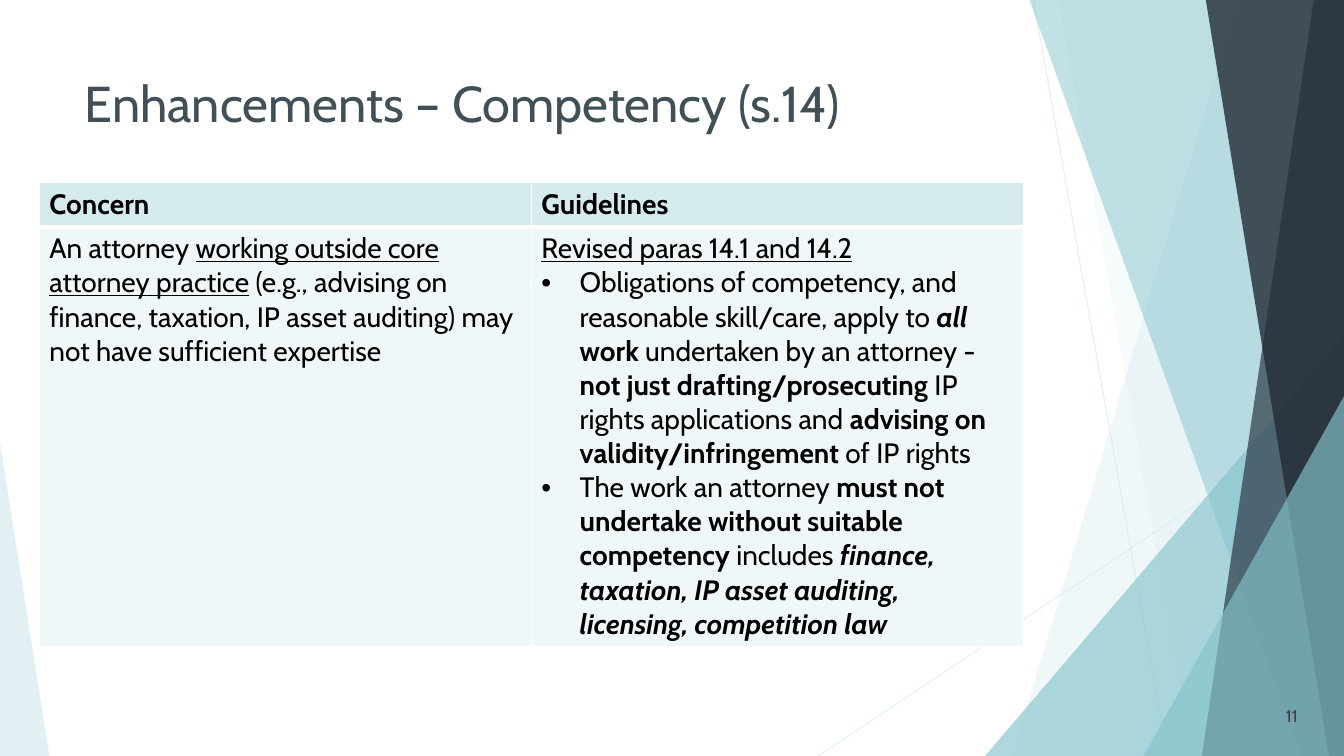
from lxml import etree
from pptx import Presentation
from pptx.dml.color import RGBColor
from pptx.enum.shapes import MSO_CONNECTOR, MSO_SHAPE
from pptx.enum.text import MSO_ANCHOR, PP_ALIGN
from pptx.oxml.ns import qn
from pptx.util import Emu, Inches, Pt

# Content: a paragraph is (bulleted, runs); a run is (text, style letters)
TITLE = "Enhancements – Competency (s.14)"
PAGE = "11"
HEADERS = ["Concern", "Guidelines"]
CONCERN = [
    (False, [("An attorney ", ""), ("working outside core attorney practice", "u"),
             (" (e.g., advising on finance, taxation, IP asset auditing) may not have "
              "sufficient expertise", "")]),
]
GUIDELINES = [
    (False, [("Revised paras 14.1 and 14.2", "u")]),
    (True, [("Obligations of competency, and reasonable skill/care, apply to ", ""),
            ("all", "bi"), (" work", "b"), (" undertaken by an attorney - ", ""),
            ("not just drafting/prosecuting", "b"), (" IP rights applications and ", ""),
            ("advising on validity/infringement", "b"), (" of IP rights", "")]),
    (True, [("The work an attorney ", ""),
            ("must not undertake without suitable competency", "b"), (" includes ", ""),
            ("finance, taxation, IP asset auditing, licensing, competition law", "bi")]),
]
ROWS = [[[(False, [(h, "b")])] for h in HEADERS], [CONCERN, GUIDELINES]]
ROW_HEIGHTS = [0.43, 4.16]
ROW_FILLS = ["D6EBEE", "F0F7F8"]
COL_WIDTH = 4.88

W, H = 13.33, 7.5
FONT = "Cabin"
PALE, TEAL, SLATE, NAVY = "D6EBEE", "86C4CD", "2E3B46", "232C34"

# Background: lines (x1, y1, x2, y2); bands (top x, bottom x) run to the right edge
LINES = [(10.25, 0, 11.58, H), (W, 4.03, 8.12, H)]
# Back to front: (kind, geometry, colour, opacity %)
FACETS = [
    ("band", (12.28, 10.04), PALE, 36),
    ("band", (10.5, 11.83), PALE, 20),
    ("triangle", (9.77, 3.33, 1), TEAL, 66),
    ("band", (10.21, 12.91), TEAL, 50),
    ("band", (13.03, 11.92), SLATE, 70),
    ("band", (11.96, 13.18), NAVY, 80),
    ("triangle", (11.34, 3.93, 1), TEAL, 66),
    ("triangle", (0, 4.39, 0), PALE, 70),
]
LEFT_TRIANGLE_WIDTH = 0.49


def rgb(value):
    return RGBColor.from_string(value)


def set_alpha(fill_parent, percent):
    color = fill_parent.find(".//" + qn("a:srgbClr"))
    etree.SubElement(color, qn("a:alpha")).set("val", str(percent * 1000))


def add_text(p, text, size=20, color="000000", style=""):
    r = p.add_run()
    r.text = text
    f = r.font
    f.name, f.size, f.color.rgb = FONT, Pt(size), rgb(color)
    f.bold, f.italic, f.underline = "b" in style, "i" in style, "u" in style


def add_bullet(p):
    pPr = p._p.get_or_add_pPr()
    pPr.set("marL", str(Inches(0.38)))
    pPr.set("indent", str(-Inches(0.38)))
    etree.SubElement(pPr, qn("a:buFont")).set("typeface", "Arial")
    etree.SubElement(pPr, qn("a:buChar")).set("char", "•")


def set_borders(cell, **widths):
    tcPr = cell._tc.get_or_add_tcPr()
    for i, side in enumerate("LRTB"):
        ln = etree.Element(qn("a:ln" + side), w=str(Pt(widths.get(side, 1))))
        fill = etree.SubElement(ln, qn("a:solidFill"))
        etree.SubElement(fill, qn("a:srgbClr")).set("val", "FFFFFF")
        tcPr.insert(i, ln)


def add_facet(shapes, kind, geometry, color, opacity):
    if kind == "band":
        top, bottom = geometry
        fb = shapes.build_freeform(Inches(top), 0)
        fb.add_line_segments([(Inches(x), Inches(y)) for x, y in
                              [(W, 0), (W, H), (bottom, H)]], close=True)
        sp = fb.convert_to_shape()
    else:
        x, y, apex = geometry
        width = W - x if apex else LEFT_TRIANGLE_WIDTH
        sp = shapes.add_shape(MSO_SHAPE.ISOSCELES_TRIANGLE, Inches(x), Inches(y),
                              Inches(width), Inches(H - y))
        sp.adjustments[0] = apex
    sp.shadow.inherit = False
    sp.line.fill.background()
    sp.fill.solid()
    sp.fill.fore_color.rgb = rgb(color)
    set_alpha(sp._element.spPr, opacity)


prs = Presentation()
prs.slide_width, prs.slide_height = Inches(W), Inches(H)
s = prs.slides.add_slide(prs.slide_layouts[5])

# Background facets
for x1, y1, x2, y2 in LINES:
    line = s.shapes.add_connector(MSO_CONNECTOR.STRAIGHT, Inches(x1), Inches(y1),
                                  Inches(x2), Inches(y2))
    line.line.color.rgb = rgb(PALE)
    line.line.width = Pt(0.75)
    spPr = line._element.spPr
    set_alpha(spPr, 70)
    etree.SubElement(spPr, qn("a:effectLst"))
for facet in FACETS:
    add_facet(s.shapes, *facet)

# Title, brought in front of the background
title = s.shapes.title
s.shapes._spTree.append(title._element)
title.left, title.top = Inches(0.74), Inches(0.67)
title.width, title.height = Inches(9.4), Inches(0.99)
tf = title.text_frame
tf.vertical_anchor = MSO_ANCHOR.TOP
tf.paragraphs[0].alignment = PP_ALIGN.LEFT
add_text(tf.paragraphs[0], TITLE, size=36, color="415057")

# Table
table = s.shapes.add_table(len(ROWS), len(HEADERS), Inches(0.39), Inches(1.81),
                           Inches(COL_WIDTH * len(HEADERS)),
                           Inches(sum(ROW_HEIGHTS))).table
for col in table.columns:
    col.width = Inches(COL_WIDTH)
for i, (row, height, fill) in enumerate(zip(ROWS, ROW_HEIGHTS, ROW_FILLS)):
    table.rows[i].height = Inches(height)
    for j, paragraphs in enumerate(row):
        cell = table.cell(i, j)
        cell.fill.solid()
        cell.fill.fore_color.rgb = rgb(fill)
        set_borders(cell, **({"B": 3} if i == 0 else {"T": 3}))
        for k, (bulleted, runs) in enumerate(paragraphs):
            tf = cell.text_frame
            p = tf.add_paragraph() if k else tf.paragraphs[0]
            if bulleted:
                add_bullet(p)
            for text, style in runs:
                add_text(p, text, style=style)

# Slide number
box = s.shapes.add_textbox(Inches(12.22), Inches(6.9), Inches(0.75), Inches(0.4))
tf = box.text_frame
tf.word_wrap = True
tf.vertical_anchor = MSO_ANCHOR.MIDDLE
tf.paragraphs[0].alignment = PP_ALIGN.RIGHT
add_text(tf.paragraphs[0], PAGE, size=12, color="404040")

prs.save("out.pptx")
